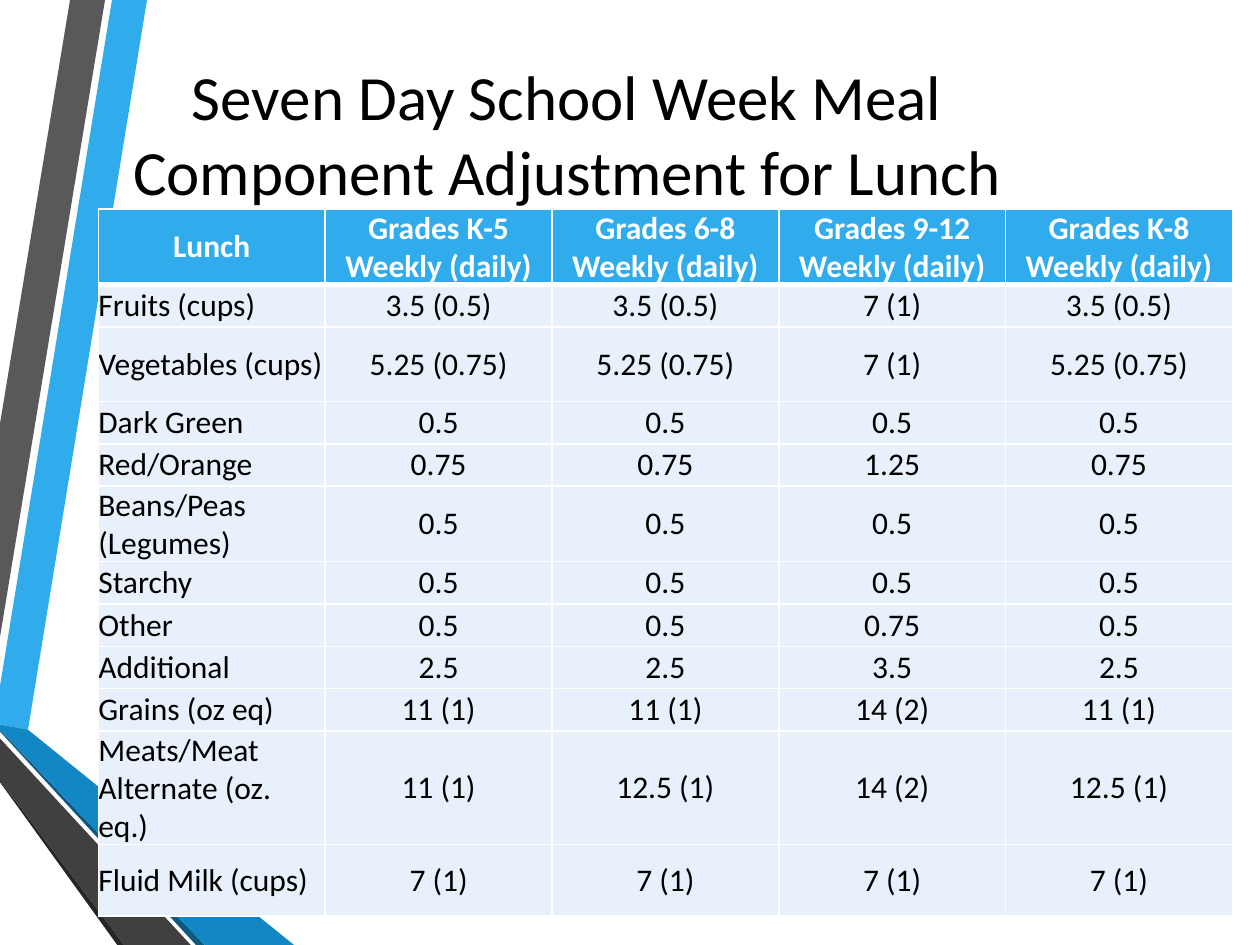
"""Build a slide with the lunch component adjustments for a seven day school week."""
from dataclasses import dataclass

from lxml.etree import SubElement
from pptx import Presentation
from pptx.dml.color import RGBColor as Color
from pptx.enum.text import MSO_ANCHOR as Anchor, PP_ALIGN as Align
from pptx.oxml.ns import qn
from pptx.util import Pt


@dataclass(frozen=True)
class Theme:
    font: str = "Calibri"
    title_size: float = 36
    table_size: float = 18
    text: str = "000000"
    white: str = "FFFFFF"
    blue: str = "30ACEC"
    mid_blue: str = "1287C3"
    deep_blue: str = "0C5A82"
    gray: str = "595959"
    dark_gray: str = "404040"
    near_black: str = "262626"
    pale_blue: str = "E8F1FB"
    border: float = 1
    header_border: float = 3


THEME = Theme()

RIBBONS = [
    (THEME.blue, [(0, 391.7), (0, 414), (15.8, 416.9), (84.2, 0), (64.1, 0)]),
    (THEME.gray, [(59.8, 0), (39.6, 0), (0, 241.9), (0, 364.3)]),
    (THEME.near_black, [(0, 445.7), (0, 447.1), (67, 540), (71.3, 540)]),
    (THEME.deep_blue, [(0, 416.9), (0, 417.6), (112.3, 540), (117.4, 540)]),
    (THEME.mid_blue, [(0, 416.9), (117.4, 540), (167.8, 540), (15.8, 416.9), (0, 414)]),
    (THEME.dark_gray, [(0, 445.7), (71.3, 540), (108.7, 540), (0, 421.9)]),
]

TITLE = "Seven Day School Week Meal\nComponent Adjustment for Lunch"
GRADES = ["K-5", "6-8", "9-12", "K-8"]
ONE_LINE, TWO_LINES, MILK_LINE, THREE_LINES = 24.2, 42.5, 41, 64
COMPONENTS = [
    (ONE_LINE, "Fruits (cups)", "3.5 (0.5)", "3.5 (0.5)", "7 (1)", "3.5 (0.5)"),
    (TWO_LINES, "Vegetables (cups)", "5.25 (0.75)", "5.25 (0.75)", "7 (1)", "5.25 (0.75)"),
    (ONE_LINE, "Dark Green", "0.5", "0.5", "0.5", "0.5"),
    (ONE_LINE, "Red/Orange", "0.75", "0.75", "1.25", "0.75"),
    (TWO_LINES, "Beans/Peas\n(Legumes)", "0.5", "0.5", "0.5", "0.5"),
    (ONE_LINE, "Starchy", "0.5", "0.5", "0.5", "0.5"),
    (ONE_LINE, "Other", "0.5", "0.5", "0.75", "0.5"),
    (ONE_LINE, "Additional", "2.5", "2.5", "3.5", "2.5"),
    (ONE_LINE, "Grains (oz eq)", "11 (1)", "11 (1)", "14 (2)", "11 (1)"),
    (THREE_LINES, "Meats/Meat\nAlternate (oz. eq.)", "11 (1)", "12.5 (1)", "14 (2)", "12.5 (1)"),
    (MILK_LINE, "Fluid Milk (cups)", "7 (1)", "7 (1)", "7 (1)", "7 (1)"),
]


def paint(target, color):
    target.fill.solid()
    target.fill.fore_color.rgb = Color.from_string(color)


def add_ribbons(page):
    group = page.shapes.add_group_shape()
    for color, points in RIBBONS:
        builder = group.shapes.build_freeform(*points[0], scale=Pt(1))
        builder.add_line_segments(points[1:], close=True)
        ribbon = builder.convert_to_shape()
        ribbon.shadow.inherit = False
        paint(ribbon, color)
        ribbon.line.fill.background()


def write(para, text, size, color, align, bold=False):
    para.alignment = align
    for index, line in enumerate(text.split("\n")):
        if index:
            para.add_line_break()
        span = para.add_run()
        span.text = line
        span.font.name = THEME.font
        span.font.size = Pt(size)
        span.font.bold = bold
        span.font.color.rgb = Color.from_string(color)


def add_title(page):
    box = page.shapes.add_textbox(Pt(0), Pt(26.6), Pt(648), Pt(98.6))
    frame = box.text_frame
    frame.word_wrap = True
    frame.vertical_anchor = Anchor.MIDDLE
    write(frame.paragraphs[0], TITLE, THEME.title_size, THEME.text, Align.CENTER)


def set_borders(cell, top, bottom):
    properties = cell._tc.get_or_add_tcPr()
    sides = {"lnL": THEME.border, "lnR": THEME.border, "lnT": top, "lnB": bottom}
    for side, width in sides.items():
        line = SubElement(properties, qn(f"a:{side}"), w=str(Pt(width)))
        fill = SubElement(line, qn("a:solidFill"))
        SubElement(fill, qn("a:srgbClr"), val=THEME.white)


def fill_cell(cell, text, row, column):
    header = row == 0
    cell.margin_left = cell.margin_right = cell.margin_top = cell.margin_bottom = 0
    cell.vertical_anchor = Anchor.MIDDLE
    set_borders(cell,
                THEME.header_border if row == 1 else THEME.border,
                THEME.header_border if header else THEME.border)
    paint(cell, THEME.blue if header else THEME.pale_blue)
    write(cell.text_frame.paragraphs[0], text, THEME.table_size,
          THEME.white if header else THEME.text,
          Align.CENTER if header or column else Align.LEFT, bold=header)


def add_component_table(page):
    headings = [f"Grades {grade}\nWeekly (daily)" for grade in GRADES]
    rows = [(TWO_LINES, "Lunch", *headings), *COMPONENTS]
    height = sum(row[0] for row in rows)
    table = page.shapes.add_table(
        len(rows), len(GRADES) + 1, Pt(56.2), Pt(119.5), Pt(648), Pt(height)).table
    table.horz_banding = False
    for row, (row_height, *texts) in enumerate(rows):
        table.rows[row].height = Pt(row_height)
        for column, text in enumerate(texts):
            fill_cell(table.cell(row, column), text, row, column)


def main():
    deck = Presentation()
    deck.slide_width, deck.slide_height = Pt(720), Pt(540)
    page = deck.slides.add_slide(deck.slide_layouts[6])
    add_ribbons(page)
    add_title(page)
    add_component_table(page)
    deck.save("out.pptx")


if __name__ == "__main__":
    main()
